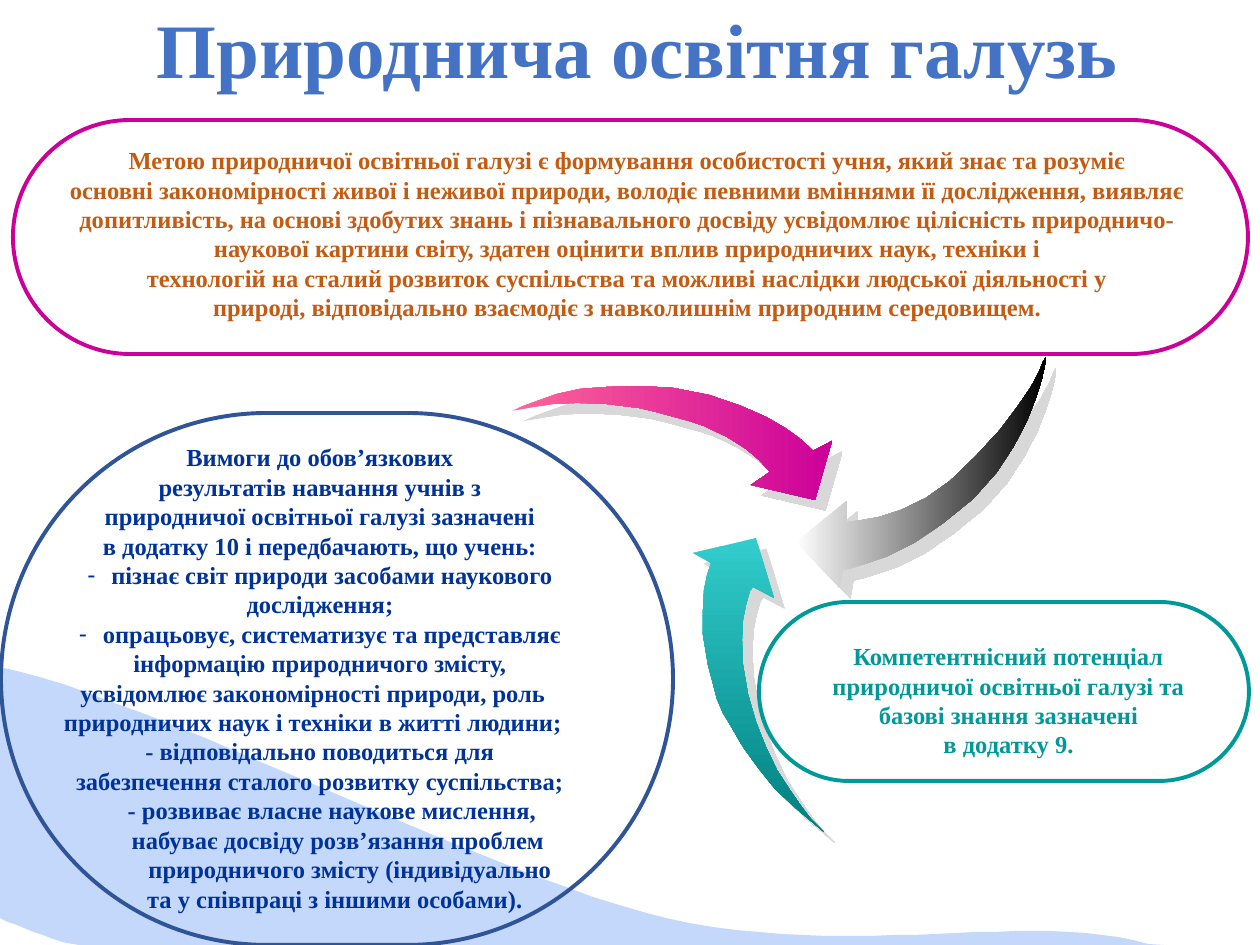
from dataclasses import dataclass

from lxml import etree
from pptx import Presentation
from pptx.dml.color import RGBColor
from pptx.enum import shapes, text
from pptx.oxml import ns
from pptx.util import Emu, Pt

PX = 914400 / 126
WIDTH, HEIGHT = 1260, 945
FONT = "Times New Roman"

TITLE_BLUE = RGBColor(0x44, 0x72, 0xC4)
WAVE_BLUE = RGBColor(0xC4, 0xD8, 0xFB)
ORANGE = RGBColor(0xC5, 0x5A, 0x11)
TEAL = RGBColor(0x00, 0x99, 0x99)
MAGENTA = RGBColor(0xCC, 0x00, 0x99)
NAVY = RGBColor(0x00, 0x33, 0x99)
FRAME_BLUE = RGBColor(0x2F, 0x54, 0x97)
PINK = RGBColor(0xFF, 0x66, 0x99)
AQUA = RGBColor(0x33, 0xCC, 0xCC)
DEEP_TEAL = RGBColor(0x00, 0x80, 0x80)
WHITE = RGBColor(0xFF, 0xFF, 0xFF)
BLACK = RGBColor(0x00, 0x00, 0x00)
SHADOW = RGBColor(0xB2, 0xB2, 0xB2)

Point = tuple[float, float]


@dataclass
class Box:
    left: int
    top: int
    width: int
    height: int

    def emu(self) -> list[Emu]:
        return [px(v) for v in (self.left, self.top, self.width, self.height)]


@dataclass
class Line:
    words: str
    left: int = 0
    right: int = 6
    bullet: bool = False


@dataclass
class Arrow:
    outline: list[Point]
    start: RGBColor
    end: RGBColor
    angle: int


@dataclass
class Frame:
    box: Box
    color: RGBColor


def px(value: float) -> Emu:
    return Emu(round(value * PX))


def place(holder, box: Box) -> None:
    holder.left, holder.top, holder.width, holder.height = box.emu()


def add_run(paragraph, words: str, size: int, color: RGBColor) -> None:
    run = paragraph.add_run()
    run.text = words
    run.font.name = FONT
    run.font.size = Pt(size)
    run.font.bold = True
    run.font.color.rgb = color


def write_lines(frame, lines: list[Line], color: RGBColor) -> None:
    frame.word_wrap = True
    frame.auto_size = text.MSO_AUTO_SIZE.NONE
    frame.vertical_anchor = text.MSO_ANCHOR.TOP
    for index, line in enumerate(lines):
        paragraph = frame.add_paragraph() if index else frame.paragraphs[0]
        properties = paragraph._p.get_or_add_pPr()
        properties.set("marL", str(px(line.left)))
        properties.set("marR", str(px(line.right)))
        properties.set("indent", str(px(-line.left if line.bullet else 0)))
        if line.bullet:
            etree.SubElement(properties, ns.qn("a:buChar"), char="-")
        else:
            etree.SubElement(properties, ns.qn("a:buNone"))
        paragraph.alignment = text.PP_ALIGN.CENTER
        paragraph.space_before = Pt(0)
        add_run(paragraph, line.words, 14, color)


def add_text(slide, box: Box, lines: list[Line], color: RGBColor) -> None:
    write_lines(slide.shapes.add_textbox(*box.emu()).text_frame, lines, color)


def add_outline(slide, points: list[Point]):
    builder = slide.shapes.build_freeform(*points[0], scale=PX)
    builder.add_line_segments(points[1:], close=True)
    outline = builder.convert_to_shape()
    outline.shadow.inherit = False
    outline.line.fill.background()
    return outline


def add_arrow(slide, arrow: Arrow) -> None:
    shape = add_outline(slide, arrow.outline)
    shape.fill.gradient()
    shape.fill.gradient_angle = arrow.angle
    for stop, color, position in zip(
        shape.fill.gradient_stops, (arrow.start, arrow.end), (0, 1)
    ):
        stop.color.rgb = color
        stop.position = position
    effects = shape._element.spPr.find(ns.qn("a:effectLst"))
    shadow = etree.SubElement(
        effects, ns.qn("a:outerShdw"), dist=str(Pt(8.5)), dir="2700000",
        algn="ctr", rotWithShape="0",
    )
    tone = etree.SubElement(shadow, ns.qn("a:srgbClr"), val=str(SHADOW))
    etree.SubElement(tone, ns.qn("a:alpha"), val="50000")


def add_frame(slide, frame: Frame) -> None:
    shape = slide.shapes.add_shape(
        shapes.MSO_SHAPE.ROUNDED_RECTANGLE, *frame.box.emu()
    )
    shape.adjustments[0] = 0.5
    shape.shadow.inherit = False
    shape.fill.background()
    shape.line.color.rgb = frame.color
    shape.line.width = Pt(2.25)


def wave_points(start: Point, curves: list[list[Point]], steps: int = 24) -> list[Point]:
    points = [start]
    for curve in curves:
        knots = [start, *curve]
        for step in range(1, steps + 1):
            t = step / steps
            weights = ((1 - t) ** 3, 3 * t * (1 - t) ** 2, 3 * t * t * (1 - t), t ** 3)
            x, y = (sum(w * k[axis] for w, k in zip(weights, knots)) for axis in (0, 1))
            points.append((min(max(x, 0), WIDTH), min(y, HEIGHT)))
        start = curve[-1]
    return [(max(x, 0), y) for x, y in points]


WAVE = wave_points((-18, 664), [
    [(121, 683), (455, 861), (643, 912)],
    [(829, 963), (1016, 912), (1133, 940)],
    [(1250, 966), (1489, 1068), (1344, 1074)],
    [(1198, 1077), (484, 992), (261, 966)],
    [(38, 941), (83, 950), (8, 922)],
    [(-67, 895), (-185, 842), (-189, 799)],
    [(-193, 756), (-156, 645), (-18, 664)],
])

ARROWS = [
    Arrow([
        (824, 832), (799, 811), (776, 790), (759, 769), (743, 747), (732, 728),
        (723, 713), (717, 699), (708, 665), (703, 635), (703, 610), (704, 590),
        (707, 575), (711, 563), (693, 553), (756, 538), (774, 598), (753, 587),
        (750, 591), (746, 605), (743, 620), (742, 640), (743, 665), (748, 694),
        (756, 722), (766, 747), (777, 770), (790, 790), (801, 806), (811, 819),
    ], AQUA, DEEP_TEAL, 270),
    Arrow([
        (512, 411), (523, 406), (537, 401), (557, 394), (580, 389), (607, 387),
        (639, 386), (673, 388), (709, 395), (741, 406), (766, 417), (785, 428),
        (799, 438), (808, 446), (813, 451), (832, 441), (815, 500), (751, 485),
        (770, 472), (759, 460), (746, 449), (727, 437), (704, 426), (689, 421),
        (656, 412), (639, 408), (606, 404), (577, 403), (553, 404), (533, 407),
    ], PINK, MAGENTA, 0),
    Arrow([
        (796, 542), (847, 501), (847, 522), (862, 520), (879, 517), (901, 510),
        (926, 498), (950, 481), (976, 456), (1000, 430), (1018, 406), (1031, 387),
        (1039, 372), (1043, 362), (1046, 357), (1045, 365), (1042, 379), (1036, 398),
        (1027, 421), (1014, 446), (997, 472), (973, 499), (942, 524), (914, 543),
        (888, 556), (868, 563), (852, 568), (843, 570), (840, 588),
    ], WHITE, BLACK, 0),
]

FRAMES = [
    Frame(Box(759, 602, 490, 179), TEAL),
    Frame(Box(13, 120, 1235, 234), MAGENTA),
    Frame(Box(1, 413, 672, 532), FRAME_BLUE),
]

GOAL = [
    Line("Метою природничої освітньої галузі є формування особистості учня, який знає та розуміє"),
    Line("основні закономірності живої і неживої природи, володіє певними вміннями її дослідження, "
         "виявляє допитливість, на основі здобутих знань і пізнавального досвіду усвідомлює "
         "цілісність природничо-наукової картини світу, здатен оцінити вплив природничих наук, "
         "техніки і"),
    Line("технологій на сталий розвиток суспільства та можливі наслідки людської діяльності у"),
    Line("природі, відповідально взаємодіє з навколишнім природним середовищем."),
]

COMPETENCE = [
    Line("Компетентнісний потенціал"),
    Line("природничої освітньої галузі та"),
    Line("базові знання зазначені"),
    Line("в додатку 9."),
]

REQUIREMENTS = [
    Line("Вимоги до обов’язкових"),
    Line("результатів навчання учнів з"),
    Line("природничої освітньої галузі зазначені"),
    Line("в додатку 10 і передбачають, що учень:"),
    Line("пізнає світ природи засобами наукового", left=24, bullet=True),
    Line("дослідження;"),
    Line("опрацьовує, систематизує та представляє", left=24, bullet=True),
    Line("інформацію природничого змісту,"),
    Line("усвідомлює закономірності природи, роль", right=20),
    Line("природничих наук і техніки в житті людини;", right=20),
    Line("- відповідально поводиться для"),
    Line("забезпечення сталого розвитку суспільства;"),
    Line("- розвиває власне наукове мислення,", left=24),
    Line("набуває досвіду розв’язання проблем", left=36),
    Line("природничого змісту (індивідуально", left=60),
    Line("та у співпраці з іншими особами).", left=30),
]


def main() -> None:
    deck = Presentation()
    deck.slide_width, deck.slide_height = px(WIDTH), px(HEIGHT)
    slide = deck.slides.add_slide(deck.slide_layouts[1])
    title, requirements = slide.placeholders

    wave = add_outline(slide, WAVE)
    wave.fill.solid()
    wave.fill.fore_color.rgb = WAVE_BLUE
    slide.shapes._spTree.insert(2, wave._element)

    place(title, Box(0, 2, 1260, 104))
    title.text_frame.margin_left = px(28)
    title.text_frame.vertical_anchor = text.MSO_ANCHOR.MIDDLE
    heading = title.text_frame.paragraphs[0]
    heading.alignment = text.PP_ALIGN.CENTER
    heading.line_spacing = 0.9
    add_run(heading, "Природнича освітня галузь", 44, TITLE_BLUE)

    place(requirements, Box(18, 436, 610, 488))
    write_lines(requirements.text_frame, REQUIREMENTS, NAVY)
    add_text(slide, Box(45, 139, 1171, 190), GOAL, ORANGE)
    for arrow in ARROWS:
        add_arrow(slide, arrow)
    add_text(slide, Box(794, 635, 435, 131), COMPETENCE, TEAL)
    for frame in FRAMES:
        add_frame(slide, frame)

    deck.save("out.pptx")


if __name__ == "__main__":
    main()
